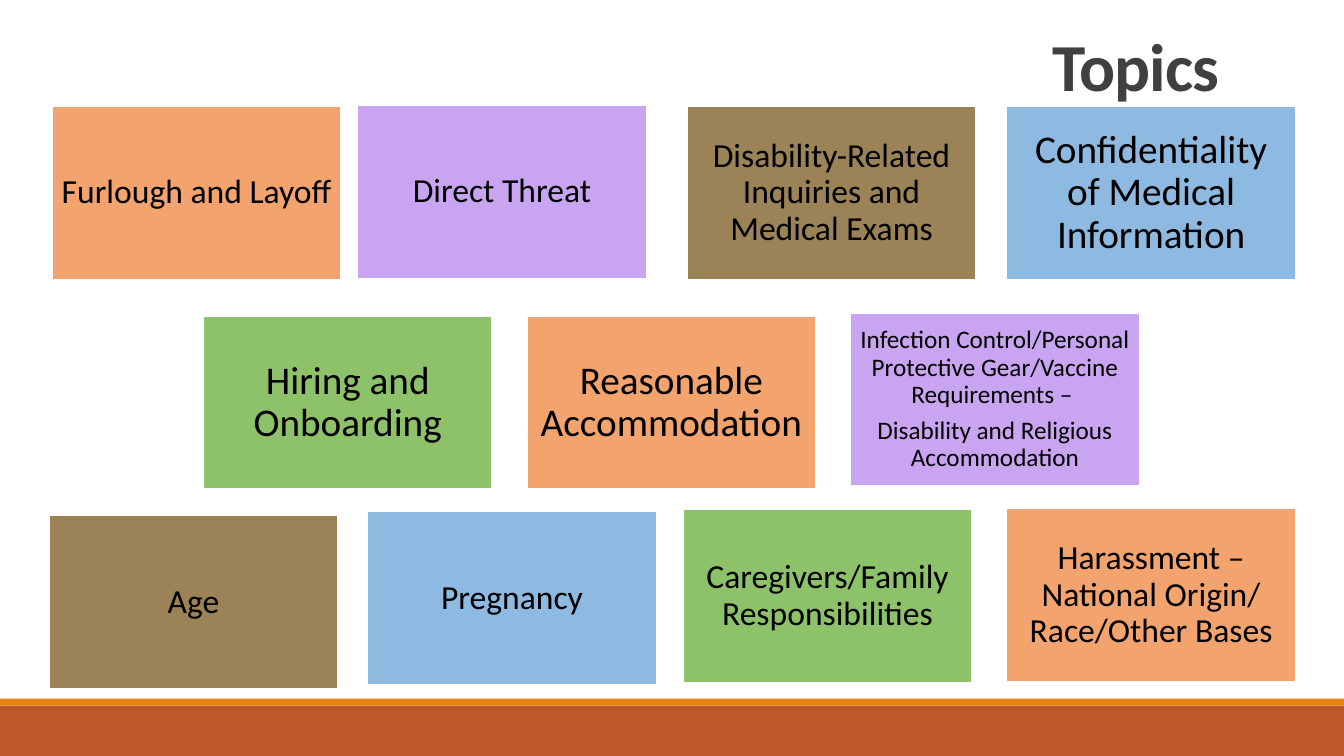
from pptx import Presentation
from pptx.dml.color import RGBColor
from pptx.enum.shapes import MSO_SHAPE
from pptx.enum.text import MSO_ANCHOR, PP_ALIGN
from pptx.util import Pt

RECTANGLE = MSO_SHAPE.RECTANGLE
TOP, MIDDLE = MSO_ANCHOR.TOP, MSO_ANCHOR.MIDDLE
CENTER, RIGHT = PP_ALIGN.CENTER, PP_ALIGN.RIGHT

FONT = "Calibri"
COLORS = {
    "white": "FFFFFF",
    "title": "404040",
    "text": "000000",
    "band": "BD582C",
    "stripe": "E48312",
    "orange": "F2A36E",
    "purple": "C9A5F1",
    "brown": "9B8357",
    "blue": "8EBAE2",
    "green": "8EC26A",
}

PAGE_WIDTH, PAGE_HEIGHT = 960, 540
TILE_WIDTH, TILE_HEIGHT = 207.36, 124.56
BAND_HEIGHT, STRIPE_HEIGHT = 36, 5

ROWS = [
    ((36.72, 74.88), [
        (0, 0.72, "orange", 24, ["Furlough and Layoff"]),
        (218.16, 0, "purple", 24, ["Direct Threat"]),
        (453.6, 0.72, "brown", 24, ["Disability-Related Inquiries and Medical Exams"]),
        (681.84, 0.72, "blue", 28, ["Confidentiality of Medical Information"]),
    ]),
    ((144.72, 223.2), [
        (0, 2.16, "green", 28, ["Hiring and Onboarding"]),
        (231.12, 2.16, "orange", 28, ["Reasonable Accommodation"]),
        (462.24, 0, "purple", 18, [
            "Infection Control/Personal Protective Gear/Vaccine Requirements – ",
            "Disability and Religious Accommodation",
        ]),
    ]),
    ((34.56, 362.88), [
        (0, 5.04, "brown", 24, ["Age"]),
        (227.52, 2.16, "blue", 24, ["Pregnancy"]),
        (452.88, 0.72, "green", 24, ["Caregivers/Family Responsibilities"]),
        (684, 0, "orange", 24, ["Harassment – National Origin/ Race/Other Bases"]),
    ]),
]


def color(name):
    return RGBColor.from_string(COLORS[name])


def add_rectangle(page, box, fill):
    shape = page.shapes.add_shape(RECTANGLE, *map(Pt, box))
    shape.shadow.inherit = False
    shape.fill.solid()
    shape.fill.fore_color.rgb = color(fill)
    shape.line.fill.background()
    return shape


def set_frame(frame, anchor, inset_x, inset_y):
    frame.word_wrap = True
    frame.vertical_anchor = anchor
    frame.margin_left = frame.margin_right = Pt(inset_x)
    frame.margin_top = frame.margin_bottom = Pt(inset_y)


def write_para(para, text, size, ink, align, spacing, after):
    para.alignment = align
    para.line_spacing = spacing
    para.space_after = Pt(after)
    span = para.add_run()
    span.text = text
    span.font.name = FONT
    span.font.size = Pt(size)
    span.font.color.rgb = color(ink)
    return span


def add_footer(page, box):
    left, top, width, height = box
    add_rectangle(page, (left, top + STRIPE_HEIGHT, width, height - STRIPE_HEIGHT), "band")
    add_rectangle(page, (left, top, width, STRIPE_HEIGHT), "stripe")


def add_title(page, box):
    frame = page.shapes.add_textbox(*map(Pt, box)).text_frame
    set_frame(frame, TOP, 7.2, 3.6)
    span = write_para(frame.paragraphs[0], "Topics", 48, "title", RIGHT, 0.85, 6)
    span.font.bold = True
    span._r.get_or_add_rPr().set("spc", "-50")


def add_tile(page, box, fill, size, texts):
    shape = add_rectangle(page, box, fill)
    shape.line.color.rgb = color("white")
    shape.line.width = Pt(2)
    frame = shape.text_frame
    set_frame(frame, MIDDLE, 0.3 * size, 0.3 * size)
    for index, text in enumerate(texts):
        para = frame.add_paragraph() if index else frame.paragraphs[0]
        write_para(para, text, size, "text", CENTER, 0.9, 0.35 * size)


def add_row(page, corner, tiles):
    left, top = corner
    for across, down, fill, size, texts in tiles:
        box = (left + across, top + down, TILE_WIDTH, TILE_HEIGHT)
        add_tile(page, box, fill, size, texts)


def main():
    deck = Presentation()
    deck.slide_width, deck.slide_height = Pt(PAGE_WIDTH), Pt(PAGE_HEIGHT)
    page = deck.slides.add_slide(deck.slide_layouts[6])
    footer_height = BAND_HEIGHT + STRIPE_HEIGHT
    add_footer(page, (0, PAGE_HEIGHT - footer_height, PAGE_WIDTH, footer_height))
    add_title(page, (86.4, 22.32, 792, 114.48))
    for corner, tiles in ROWS:
        add_row(page, corner, tiles)
    deck.save("out.pptx")


if __name__ == "__main__":
    main()
